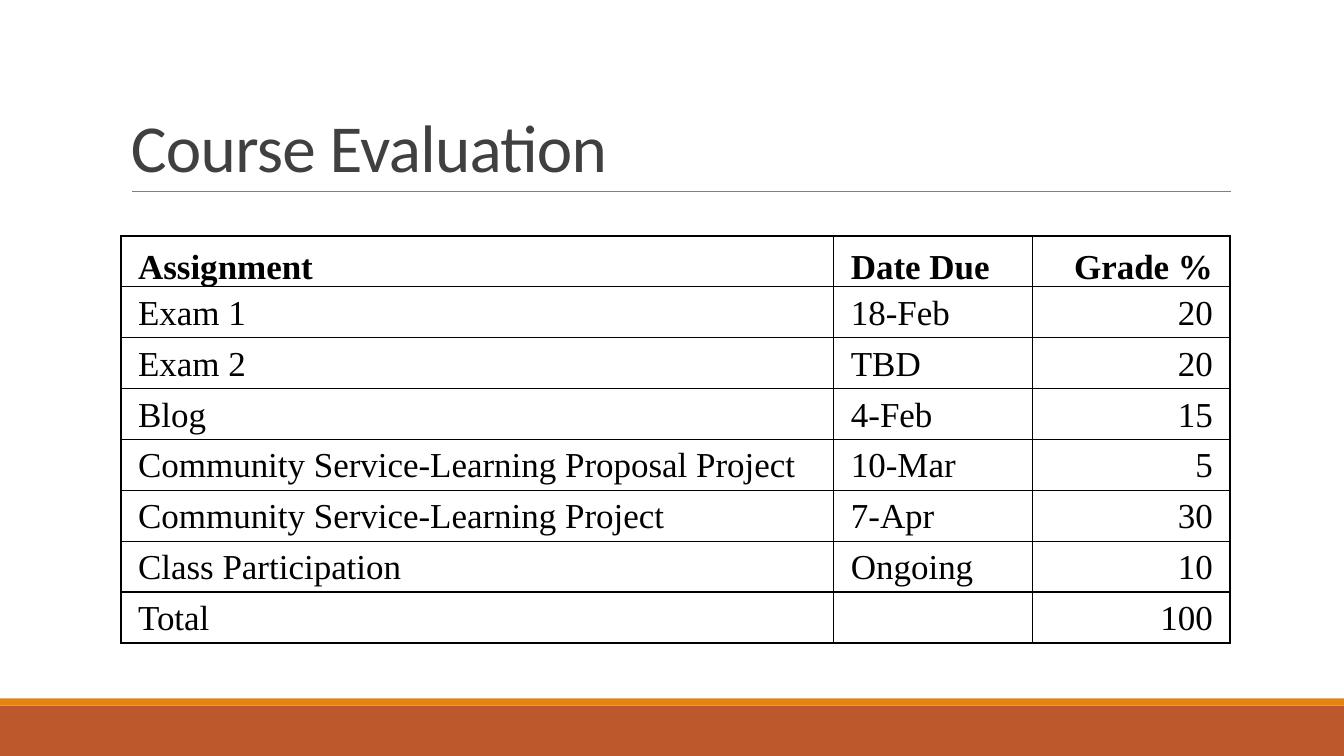
from lxml import etree
from pptx import Presentation
from pptx.dml.color import RGBColor
from pptx.enum.shapes import MSO_CONNECTOR, MSO_SHAPE
from pptx.enum.text import MSO_ANCHOR, PP_ALIGN
from pptx.oxml import parse_xml
from pptx.oxml.ns import nsdecls, qn
from pptx.util import Inches, Pt


def color(value):
    return RGBColor.from_string(value)


def add_border(cell, index, side, width):
    cell._tc.get_or_add_tcPr().insert(index, parse_xml(
        f'<a:{side} {nsdecls("a")} w="{Pt(width)}"><a:solidFill>'
        f'<a:srgbClr val="000000"/></a:solidFill></a:{side}>'))


prs = Presentation()
prs.slide_width = Inches(13.33)
prs.slide_height = Inches(7.5)
s = prs.slides.add_slide(prs.slide_layouts[6])

for top, height, fill in [(7, 0.5, "BD582C"), (6.93, 0.07, "E48312")]:
    sp = s.shapes.add_shape(MSO_SHAPE.RECTANGLE, 0, Inches(top), prs.slide_width, Inches(height))
    sp.shadow.inherit = False
    sp.fill.solid()
    sp.fill.fore_color.rgb = color(fill)
    sp.line.fill.background()

rule = s.shapes.add_connector(
    MSO_CONNECTOR.STRAIGHT, Inches(1.31), Inches(1.9), Inches(12.21), Inches(1.9))
rule.line.color.rgb = color("808080")
rule.line.width = Pt(0.5)
etree.SubElement(rule._element.spPr, qn("a:effectLst"))

title = s.shapes.add_textbox(Inches(1.2), Inches(0.31), Inches(11), Inches(1.59))
tf = title.text_frame
tf.word_wrap = True
tf.vertical_anchor = MSO_ANCHOR.BOTTOM
p = tf.paragraphs[0]
p.line_spacing = 0.85
p.font.name = "Calibri"
p.font.size = Pt(48)
p.font.color.rgb = color("404040")
r = p.add_run()
r.text = "Course Evaluation"
r._r.get_or_add_rPr().set("spc", "-50")

rows = [
    ("Assignment", "Date Due", "Grade %"),
    ("Exam 1", "18-Feb", "20"),
    ("Exam 2", "TBD", "20"),
    ("Blog", "4-Feb", "15"),
    ("Community Service-Learning Proposal Project", "10-Mar", "5"),
    ("Community Service-Learning Project", "7-Apr", "30"),
    ("Class Participation", "Ongoing", "10"),
    ("Total", "", "100"),
]
widths = [7.07, 1.97, 1.96]
last_row, last_col = len(rows) - 1, len(widths) - 1

table = s.shapes.add_table(
    len(rows), len(widths), Inches(1.2), Inches(2.34), Inches(11), Inches(4.04)).table
table.first_row = False
table.horz_banding = False
for column, width in zip(table.columns, widths):
    column.width = Inches(width)

for i, row in enumerate(rows):
    for j, text in enumerate(row):
        cell = table.cell(i, j)
        cell.fill.background()
        cell.margin_left = cell.margin_right = Inches(0.17)
        cell.margin_top = cell.margin_bottom = 0
        cell.vertical_anchor = MSO_ANCHOR.MIDDLE if i else MSO_ANCHOR.BOTTOM
        p = cell.text_frame.paragraphs[0]
        p.line_spacing = 1.07
        p.alignment = PP_ALIGN.RIGHT if j == last_col else PP_ALIGN.LEFT
        p.font.name = "Times New Roman"
        p.font.size = Pt(25)
        p.font.bold = i == 0
        p.font.color.rgb = color("000000")
        if text:
            p.add_run().text = text
        outer = [("lnL", j == 0), ("lnR", j == last_col), ("lnT", i == 0), ("lnB", i == last_row)]
        for index, (side, is_outer) in enumerate(outer):
            add_border(cell, index, side, 1.5 if is_outer else 1)

prs.save("out.pptx")
